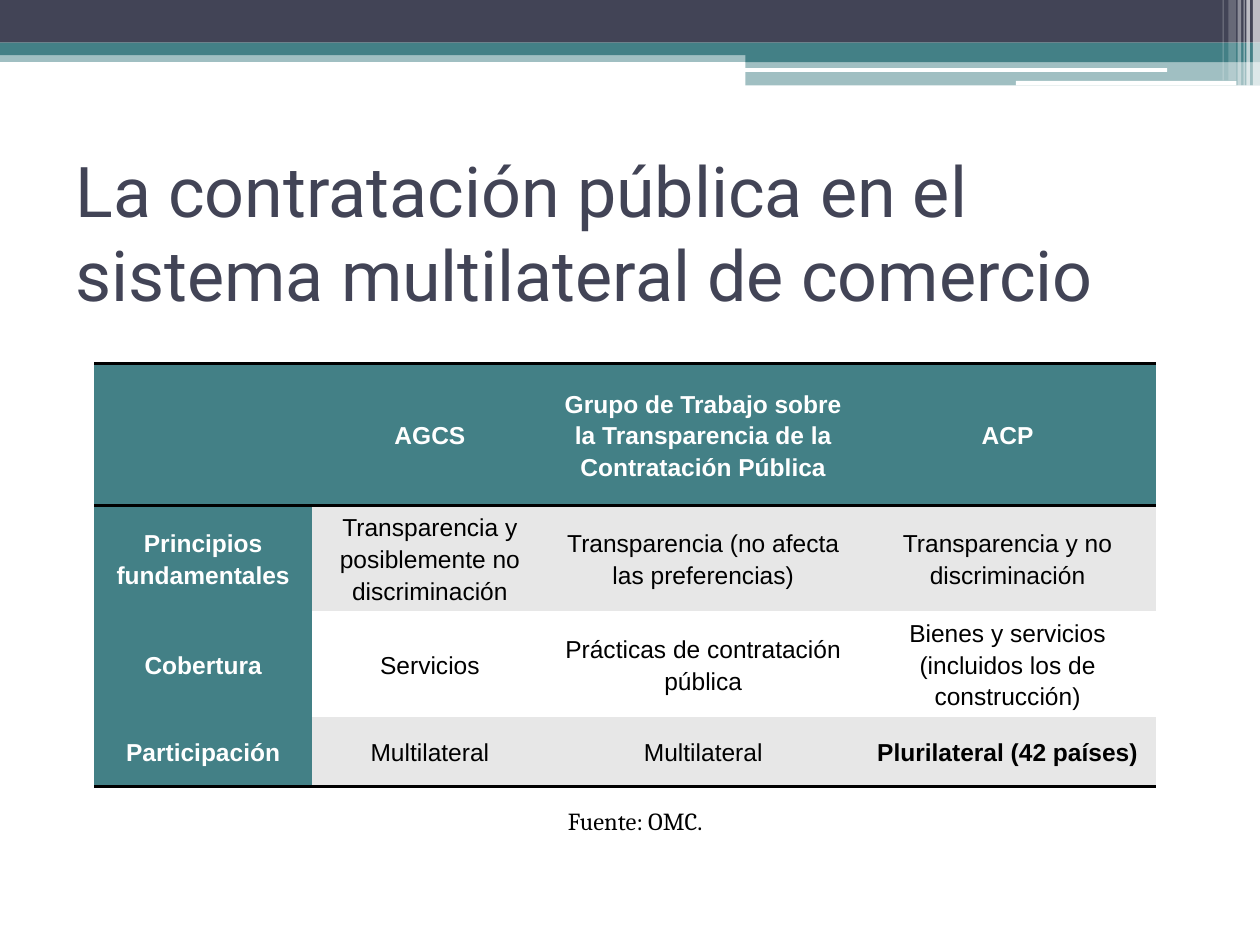
import pptx
import pptx.dml.color
import pptx.enum.shapes
import pptx.enum.text
import pptx.oxml
import pptx.oxml.ns
import pptx.util

Pt = pptx.util.Pt
SHAPE = pptx.enum.shapes.MSO_SHAPE
ALIGN = pptx.enum.text.PP_ALIGN
ANCHOR = pptx.enum.text.MSO_ANCHOR

COLORS = {
    "navy": "424456",
    "teal": "438086",
    "white": "FFFFFF",
    "black": "000000",
    "grey": "E7E7E7",
}

# Content
TITLE = "La contratación pública en el sistema multilateral de comercio"
SOURCE = "Fuente: OMC."
ROWS = [
    ["", "AGCS", "Grupo de Trabajo sobre la Transparencia de la Contratación Pública",
     "ACP"],
    ["Principios fundamentales", "Transparencia y posiblemente no discriminación",
     "Transparencia (no afecta las preferencias)", "Transparencia y no discriminación"],
    ["Cobertura", "Servicios", "Prácticas de contratación pública",
     "Bienes y servicios (incluidos los de construcción)"],
    ["Participación", "Multilateral", "Multilateral", "Plurilateral (42 países)"],
]
BOLD_BODY = {"Plurilateral (42 países)"}
COL_WIDTHS = [124.5, 134.6, 177.8, 170]
ROW_HEIGHTS = [81.2, 60.4, 60.4, 39.8]

# Banner: left, top, width, height, colour, opacity in percent
BANDS = [
    (0, 28.8, 720, 6.6, "teal", 50),
    (0, 0, 720, 24.4, "navy", 100),
    (0, 24.4, 720, 7.2, "teal", 100),
    (426, 28.3, 294, 7.2, "teal", 100),
    (426, 35.3, 294, 13.6, "teal", 50),
]
PILLS = [
    (425.5, 38.9, 241.5, 2.2, "white", 100),
    (580.5, 46.2, 126, 2.6, "white", 100),
]
# Vertical stripes: left, width, height, opacity
STRIPES = [
    (715.9, 4.1, 49, 65),
    (712.2, 2, 49, 65),
    (710.6, 0.7, 49, 60),
    (707.2, 2, 49, 40),
    (702, 4.3, 46, 20),
    (698.6, 0.7, 46, 30),
]


def rgb(name):
    return pptx.dml.color.RGBColor.from_string(COLORS[name])


def add_bar(slide, kind, left, top, width, height, color, opacity):
    s = slide.shapes.add_shape(kind, Pt(left), Pt(top), Pt(width), Pt(height))
    s.shadow.inherit = False
    s.line.fill.background()
    s.fill.solid()
    s.fill.fore_color.rgb = rgb(color)
    if opacity < 100:
        clr = s.fill._xPr.find(".//" + pptx.oxml.ns.qn("a:srgbClr"))
        alpha = pptx.oxml.parse_xml(
            f'<a:alpha {pptx.oxml.ns.nsdecls("a")} val="{opacity * 1000}"/>')
        clr.append(alpha)


def write(tf, text, *, font, size, color, bold=False, align=ALIGN.LEFT, spacing=None):
    tf.word_wrap = True
    p = tf.paragraphs[0]
    p.alignment = align
    if spacing:
        p.line_spacing = spacing
    p.font.size = Pt(size)
    if text:
        r = p.add_run()
        r.text = text
        r.font.name = font
        r.font.size = Pt(size)
        r.font.bold = bold
        r.font.color.rgb = rgb(color)


def add_text(slide, left, top, width, height, text, anchor=ANCHOR.TOP, **fmt):
    tf = slide.shapes.add_textbox(Pt(left), Pt(top), Pt(width), Pt(height)).text_frame
    tf.vertical_anchor = anchor
    write(tf, text, **fmt)


def set_borders(cell, ruled):
    tc_pr = cell._tc.get_or_add_tcPr()
    for side in "LRTB":
        if side in ruled:
            fill = f'<a:solidFill><a:srgbClr val="{COLORS["black"]}"/></a:solidFill>'
        else:
            fill = "<a:noFill/>"
        tc_pr.append(pptx.oxml.parse_xml(
            f'<a:ln{side} {pptx.oxml.ns.nsdecls("a")} w="{Pt(2)}">{fill}</a:ln{side}>'))


def add_comparison(slide, left, top):
    table = slide.shapes.add_table(
        len(ROWS), len(COL_WIDTHS), Pt(left), Pt(top),
        Pt(sum(COL_WIDTHS)), Pt(sum(ROW_HEIGHTS))).table
    table.horz_banding = False
    for column, width in zip(table.columns, COL_WIDTHS):
        column.width = Pt(width)
    for row, height in zip(table.rows, ROW_HEIGHTS):
        row.height = Pt(height)

    ruled = {0: "TB", 1: "T", len(ROWS) - 1: "B"}
    for i, texts in enumerate(ROWS):
        for j, text in enumerate(texts):
            cell = table.cell(i, j)
            heading = i == 0 or j == 0
            set_borders(cell, ruled.get(i, ""))
            cell.fill.solid()
            cell.fill.fore_color.rgb = rgb(
                "teal" if heading else "grey" if i % 2 else "white")
            cell.margin_left = cell.margin_right = Pt(5)
            cell.margin_top = cell.margin_bottom = Pt(0)
            cell.vertical_anchor = ANCHOR.MIDDLE
            write(cell.text_frame, text, font="Arial", size=14,
                  color="white" if heading else "black",
                  bold=heading or text in BOLD_BODY,
                  align=ALIGN.CENTER, spacing=1.15)


def main():
    prs = pptx.Presentation()
    prs.slide_width, prs.slide_height = Pt(720), Pt(540)
    slide = prs.slides.add_slide(prs.slide_layouts[6])

    # Banner
    for band in BANDS:
        add_bar(slide, SHAPE.RECTANGLE, *band)
    for pill in PILLS:
        add_bar(slide, SHAPE.ROUNDED_RECTANGLE, *pill)
    for left, width, height, opacity in STRIPES:
        add_bar(slide, SHAPE.RECTANGLE, left, 0, width, height, "white", opacity)

    # Title, table and source
    add_text(slide, 36, 90, 648, 84, TITLE, anchor=ANCHOR.MIDDLE,
             font="Roboto", size=40, color="navy")
    add_comparison(slide, 53.9, 207.5)
    add_text(slide, 42.5, 457, 641, 24.5, SOURCE, font="Cambria", size=14,
             color="black", align=ALIGN.CENTER)

    prs.save("out.pptx")


if __name__ == "__main__":
    main()
